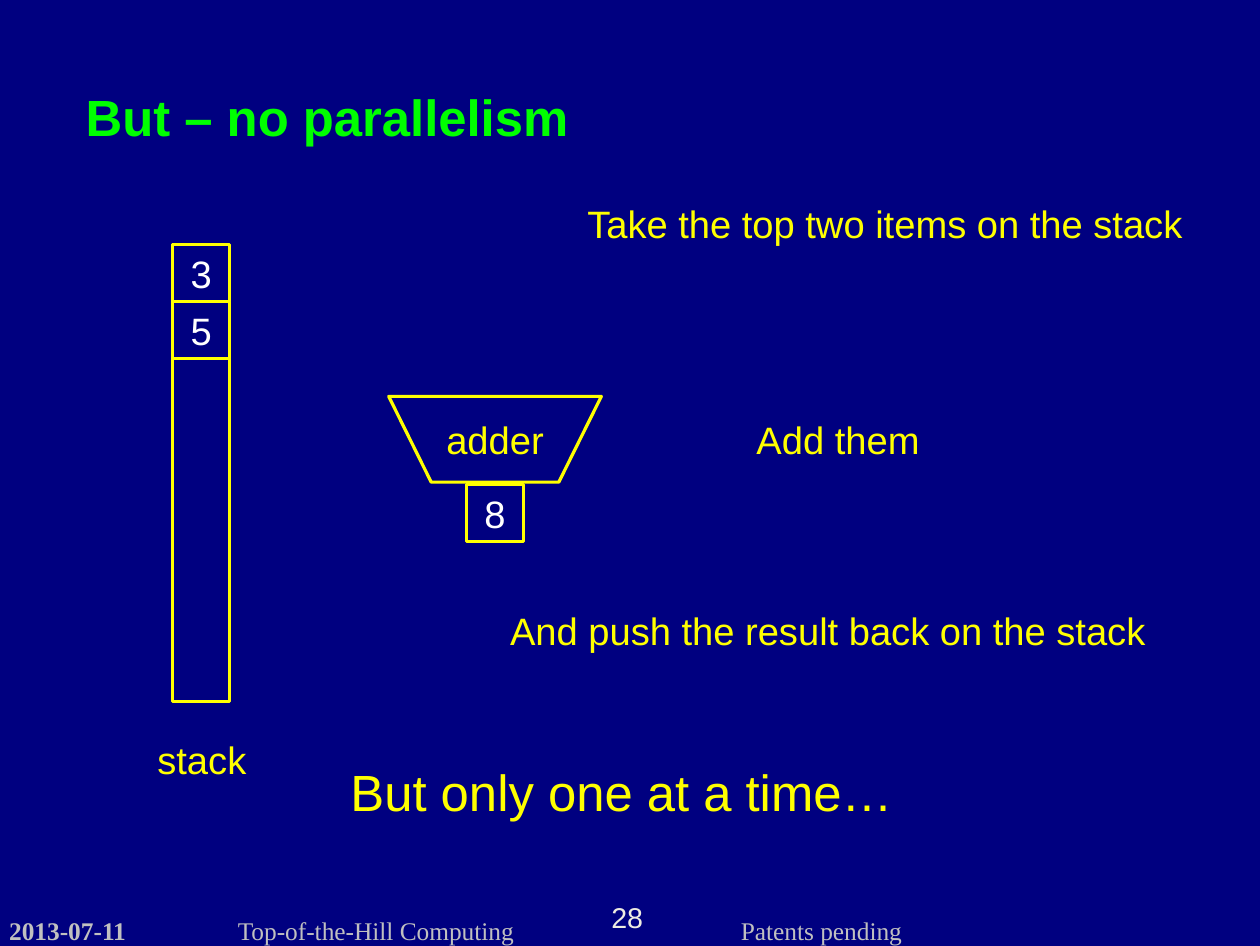
from dataclasses import dataclass

from pptx import Presentation
from pptx.dml.color import RGBColor
from pptx.enum.shapes import MSO_SHAPE
from pptx.enum.text import MSO_ANCHOR, PP_ALIGN
from pptx.util import Inches, Pt


@dataclass(frozen=True)
class Theme:
    """Colours, fonts and type sizes of the slide."""
    navy: str = "000080"
    green: str = "00FF00"
    yellow: str = "FFFF00"
    white: str = "FFFFFF"
    silver: str = "C0C0C0"
    cream: str = "EEECE1"
    sans: str = "Arial"
    serif: str = "Times New Roman"
    large: int = 32
    body: int = 24
    number: int = 18
    footer: int = 16
    line: int = 2


THEME = Theme()
CELL = 0.5


def grid(*cells):
    """Turn columns and rows of half-inch cells into lengths."""
    return [Inches(CELL * n) for n in cells]


def write(sp, text, size, color, font=THEME.sans, bold=False,
          align=PP_ALIGN.CENTER, anchor=MSO_ANCHOR.TOP):
    """Fill a shape with one line of styled text."""
    tf = sp.text_frame
    tf.margin_left = tf.margin_right = tf.margin_top = tf.margin_bottom = 0
    tf.word_wrap = False
    tf.vertical_anchor = anchor
    p = tf.paragraphs[0]
    p.text = text
    p.alignment = align
    p.font.name = font
    p.font.size = Pt(size)
    p.font.bold = bold
    p.font.color.rgb = RGBColor.from_string(color)


def add_label(s, box, text, size=THEME.body, color=THEME.yellow, **style):
    """Add a text box on the grid."""
    write(s.shapes.add_textbox(*grid(*box)), text, size, color, **style)


def add_outline(s, box, text="", color=THEME.white, kind=MSO_SHAPE.RECTANGLE):
    """Add an unfilled, yellow-edged shape with centred text."""
    sp = s.shapes.add_shape(kind, *grid(*box))
    sp.shadow.inherit = False
    sp.fill.background()
    sp.line.color.rgb = RGBColor.from_string(THEME.yellow)
    sp.line.width = Pt(THEME.line)
    if text:
        write(sp, text, THEME.body, color, anchor=MSO_ANCHOR.MIDDLE)


def add_stack(s, left, top, items, free_rows):
    """Add the item cells with the free part of the stack below them."""
    add_outline(s, (left, top + len(items), 1, free_rows))
    for row, item in enumerate(items):
        add_outline(s, (left, top + row, 1, 1), item)


def add_footer(s):
    """Add the date, owner, notice and slide number."""
    for left, width, text, bold in (
        (0.16, 2.5, "2013-07-11", True),
        (4.16, 5.2, "Top-of-the-Hill Computing", False),
        (12.96, 3.2, "Patents pending", False),
    ):
        add_label(s, (left, 16, width, 0.5), text, THEME.footer, THEME.silver,
                  font=THEME.serif, bold=bold, align=PP_ALIGN.LEFT)
    add_label(s, (10.66, 15.74, 0.62, 0.58), "28", THEME.number, THEME.cream)


def main():
    """Build the slide and save it."""
    prs = Presentation()
    prs.slide_width, prs.slide_height = Inches(11.02), Inches(8.27)
    s = prs.slides.add_slide(prs.slide_layouts[6])
    s.background.fill.solid()
    s.background.fill.fore_color.rgb = RGBColor.from_string(THEME.navy)

    add_footer(s)
    add_label(s, (1.5, 1.5, 8.52, 1.04), "But – no parallelism", THEME.large,
              THEME.green, bold=True, align=PP_ALIGN.LEFT)
    add_stack(s, 3.02, 4.27, ("3", "5"), 6)
    add_outline(s, (6.8, 6.93, 3.72, 1.5), "adder", THEME.yellow,
                MSO_SHAPE.FLOWCHART_MANUAL_OPERATION)
    add_outline(s, (8.16, 8.47, 1, 1), "8")
    for box, text in (
        ((2.54, 12.88, 1.98, 0.8), "stack"),
        ((10.02, 3.5, 10.92, 0.8), "Take the top two items on the stack"),
        ((13.02, 7.28, 3.28, 0.8), "Add them"),
        ((8.66, 10.62, 11.64, 0.8), "And push the result back on the stack"),
    ):
        add_label(s, box, text)
    add_label(s, (5.9, 13.3, 9.96, 1.08), "But only one at a time…", THEME.large)
    prs.save("out.pptx")


if __name__ == "__main__":
    main()
